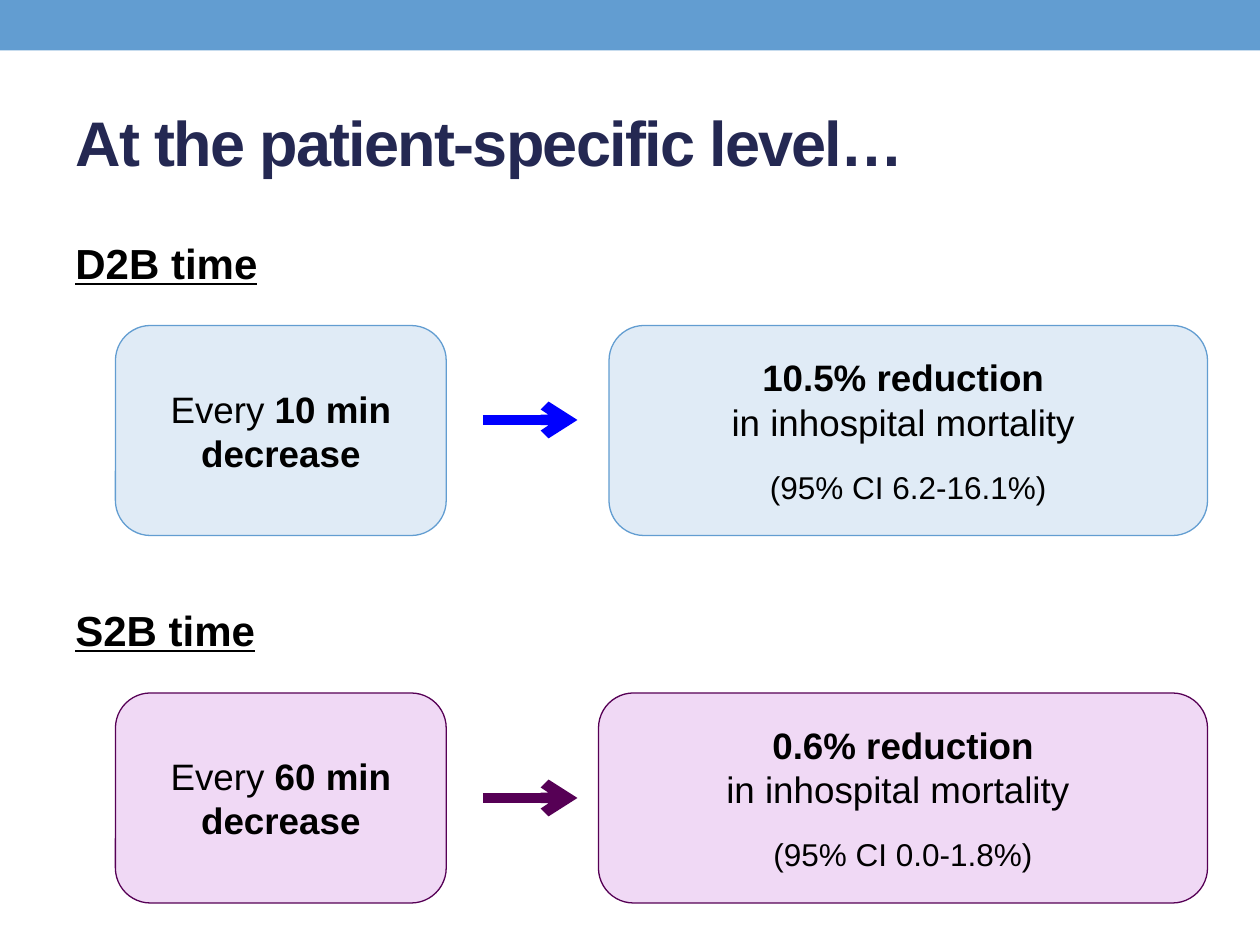
from pptx import Presentation
from pptx.dml.color import RGBColor
from pptx.enum.shapes import MSO_CONNECTOR, MSO_SHAPE
from pptx.enum.text import MSO_ANCHOR, MSO_AUTO_SIZE, PP_ALIGN
from pptx.oxml.ns import qn
from pptx.util import Pt
from lxml.etree import SubElement

BLUE = RGBColor(0x62, 0x9D, 0xD1)
PALE_BLUE = RGBColor(0xE0, 0xEB, 0xF6)
ARROW_BLUE = RGBColor(0x00, 0x00, 0xFF)
PURPLE = RGBColor(0x56, 0x00, 0x55)
PALE_PURPLE = RGBColor(0xF0, 0xD9, 0xF5)
NAVY = RGBColor(0x24, 0x28, 0x52)
BLACK = RGBColor(0x00, 0x00, 0x00)

PLAIN = {"name": "Arial", "size": Pt(21), "bold": False}
STRONG = {**PLAIN, "bold": True}
SMALL = {**PLAIN, "size": Pt(18)}
HEADING = {**STRONG, "size": Pt(24), "underline": True}
TITLE = {**STRONG, "size": Pt(36)}

BOX_LEFT, BOX_WIDTH, BOX_HEIGHT = 66, 189, 120
RESULT_RIGHT = 690
ARROW_START, ARROW_END = 276, 330
HEADING_TO_BOX = 54

SECTIONS = [
    {"top": 132, "heading": "D2B time", "change": "10 min decrease",
     "reduction": "10.5% reduction ", "interval": "(95% CI 6.2-16.1%)",
     "result_left": 348, "arrow_y": 240,
     "fill": PALE_BLUE, "line": BLUE, "arrow": ARROW_BLUE},
    {"top": 342, "heading": "S2B time", "change": "60 min decrease",
     "reduction": "0.6% reduction", "interval": "(95% CI 0.0-1.8%)",
     "result_left": 342, "arrow_y": 456,
     "fill": PALE_PURPLE, "line": PURPLE, "arrow": PURPLE},
]


def add_run(paragraph, text, formats, color=BLACK):
    """Add formatted text to a paragraph and return the run."""
    run = paragraph.add_run()
    run.text = text
    for name, value in formats.items():
        setattr(run.font, name, value)
    run.font.color.rgb = color
    return run


def add_banner(slide, width):
    """Add the coloured band along the top edge."""
    banner = slide.shapes.add_shape(MSO_SHAPE.RECTANGLE, 0, 0, width, Pt(28.8))
    banner.shadow.inherit = False
    banner.fill.solid()
    banner.fill.fore_color.rgb = BLUE
    banner.line.fill.background()


def format_title(slide, text):
    """Place and format the slide title."""
    title = slide.shapes.title
    position = {"left": Pt(36), "top": Pt(42), "width": Pt(648), "height": Pt(78)}
    for name, value in position.items():
        setattr(title, name, value)
    frame = title.text_frame
    frame.auto_size = MSO_AUTO_SIZE.NONE
    frame.vertical_anchor = MSO_ANCHOR.MIDDLE
    paragraph = frame.paragraphs[0]
    paragraph.alignment = PP_ALIGN.LEFT
    run = add_run(paragraph, text, TITLE, NAVY)
    run.font._element.set("spc", "-100")


def add_heading(slide, text, top):
    """Add an underlined section heading."""
    box = slide.shapes.add_textbox(Pt(36), Pt(top), Pt(648), Pt(42))
    box.text_frame.word_wrap = True
    paragraph = box.text_frame.paragraphs[0]
    paragraph.space_before = Pt(3)
    add_run(paragraph, text, HEADING)


def add_box(slide, left, top, width, section, lines):
    """Add a rounded box holding centred lines, each a gap and its runs."""
    box = slide.shapes.add_shape(MSO_SHAPE.ROUNDED_RECTANGLE, Pt(left), Pt(top),
                                 Pt(width), Pt(BOX_HEIGHT))
    box.shadow.inherit = False
    box.fill.solid()
    box.fill.fore_color.rgb = section["fill"]
    box.line.color.rgb = section["line"]
    box.line.width = Pt(0.75)
    frame = box.text_frame
    frame.word_wrap = True
    frame.vertical_anchor = MSO_ANCHOR.MIDDLE
    for index, (gap, runs) in enumerate(lines):
        paragraph = frame.add_paragraph() if index else frame.paragraphs[0]
        paragraph.alignment = PP_ALIGN.CENTER
        paragraph.space_before = Pt(gap)
        for text, formats in runs:
            add_run(paragraph, text, formats)


def add_arrow(slide, y, color):
    """Add a thick horizontal arrow between two boxes."""
    arrow = slide.shapes.add_connector(MSO_CONNECTOR.STRAIGHT, Pt(ARROW_START),
                                       Pt(y), Pt(ARROW_END), Pt(y))
    arrow.line.color.rgb = color
    arrow.line.width = Pt(6)
    SubElement(arrow.line._get_or_add_ln(), qn("a:tailEnd"), type="arrow")
    SubElement(arrow._element.spPr, qn("a:effectLst"))


def add_section(slide, section):
    """Add a heading with its cause box, arrow and result box."""
    box_top = section["top"] + HEADING_TO_BOX
    left = section["result_left"]
    cause = [(0, [("Every ", PLAIN), (section["change"], STRONG)])]
    result = [(0, [(section["reduction"], STRONG)]),
              (0, [("in inhospital mortality ", PLAIN)]),
              (14, [(section["interval"], SMALL)])]
    add_heading(slide, section["heading"], section["top"])
    add_box(slide, BOX_LEFT, box_top, BOX_WIDTH, section, cause)
    add_box(slide, left, box_top, RESULT_RIGHT - left, section, result)
    add_arrow(slide, section["arrow_y"], section["arrow"])


def main():
    """Build and save the slide."""
    presentation = Presentation()
    presentation.slide_width, presentation.slide_height = Pt(720), Pt(540)
    slide = presentation.slides.add_slide(presentation.slide_layouts[5])
    add_banner(slide, presentation.slide_width)
    format_title(slide, "At the patient-specific level…")
    for section in SECTIONS:
        add_section(slide, section)
    presentation.save("out.pptx")


if __name__ == "__main__":
    main()
